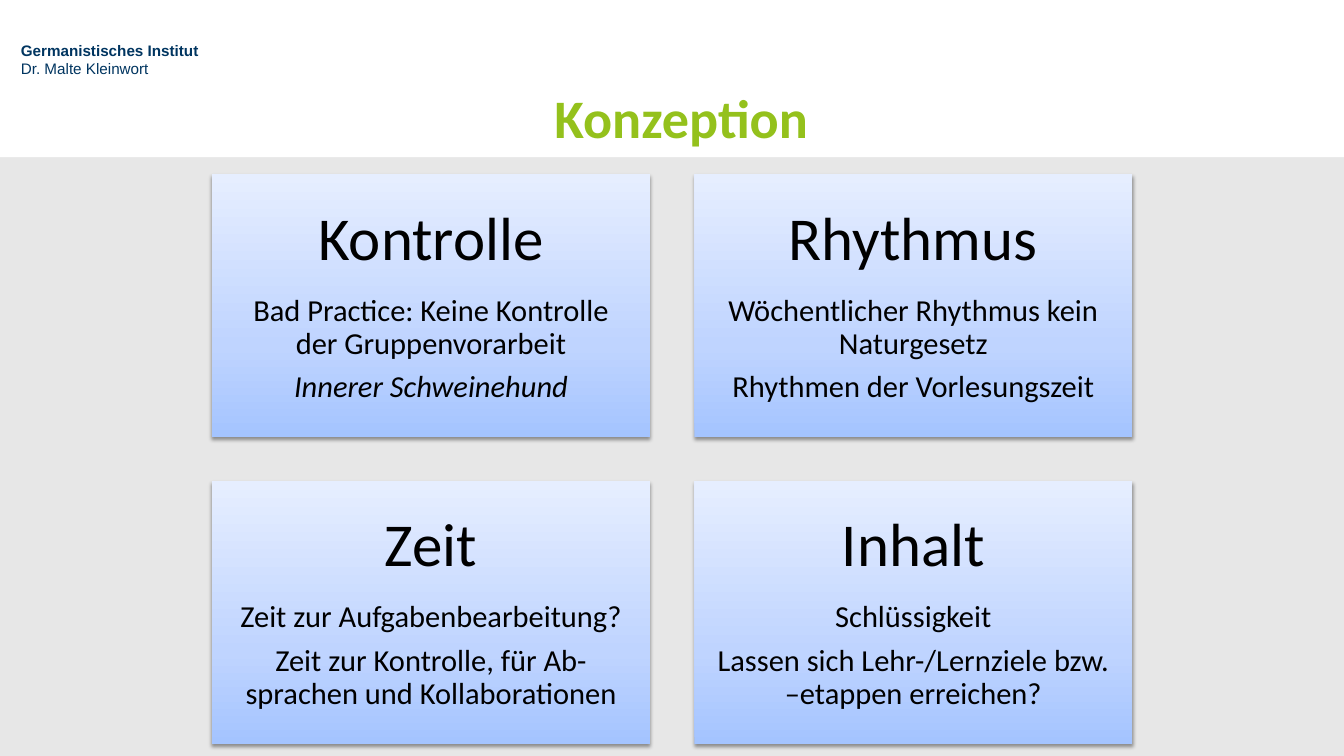
from lxml import etree
from pptx import Presentation
from pptx.dml.color import RGBColor
from pptx.enum.shapes import MSO_SHAPE
from pptx.enum.text import MSO_ANCHOR, MSO_AUTO_SIZE, PP_ALIGN
from pptx.oxml import parse_xml
from pptx.oxml.ns import nsdecls, qn
from pptx.util import Cm, Pt

RECTANGLE = MSO_SHAPE.RECTANGLE
MIDDLE = MSO_ANCHOR.MIDDLE
NO_AUTOFIT = MSO_AUTO_SIZE.NONE
LEFT, CENTER = PP_ALIGN.LEFT, PP_ALIGN.CENTER

WHITE = RGBColor(0xFF, 0xFF, 0xFF)
BLACK = RGBColor(0x00, 0x00, 0x00)
GREY = RGBColor(0xE7, 0xE7, 0xE7)
NAVY = RGBColor(0x00, 0x35, 0x60)
GREEN = RGBColor(0x94, 0xC1, 0x1C)
CARD_GRADIENT = [
    (0, RGBColor(0xA4, 0xC4, 0xFF)),
    (35, RGBColor(0xBF, 0xD4, 0xFF)),
    (100, RGBColor(0xE6, 0xEE, 0xFF)),
]

CARDS = [
    ("Kontrolle", "Bad Practice: Keine Kontrolle der Gruppenvorarbeit", "Innerer Schweinehund"),
    ("Rhythmus", "Wöchentlicher Rhythmus kein Naturgesetz", "Rhythmen der Vorlesungszeit"),
    ("Zeit", "Zeit zur Aufgabenbearbeitung?", "Zeit zur Kontrolle, für Ab-sprachen und Kollaborationen"),
    ("Inhalt", "Schlüssigkeit", "Lassen sich Lehr-/Lernziele bzw. –etappen erreichen?"),
]
CARD_LEFT, CARD_TOP = 5.89, 4.85
CARD_WIDTH, CARD_HEIGHT = 12.17, 7.31
COLUMN_STEP, ROW_STEP = 13.4, 8.52


def write_paragraph(frame, text, size, color, font="Calibri", bold=False, italic=False,
                    align=CENTER, line_spacing=1.0, space_after=0):
    """Fill the empty first paragraph of the frame, or append a new one."""
    paragraph = frame.paragraphs[0] if not frame.text else frame.add_paragraph()
    paragraph.alignment = align
    paragraph.line_spacing = line_spacing
    paragraph.space_before = Pt(0)
    paragraph.space_after = Pt(space_after)
    run = paragraph.add_run()
    run.text = text
    run.font.name = font
    run.font.size = Pt(size)
    run.font.bold = bold
    run.font.italic = italic
    run.font.color.rgb = color


def add_rectangle(left, top, width, height):
    rectangle = slide.shapes.add_shape(RECTANGLE, Cm(left), Cm(top), Cm(width), Cm(height))
    rectangle.shadow.inherit = False
    rectangle.line.fill.background()
    return rectangle


prs = Presentation()
prs.slide_width, prs.slide_height = Cm(37.34), Cm(21.01)
slide = prs.slides.add_slide(prs.slide_layouts[5])
slide.background.fill.solid()
slide.background.fill.fore_color.rgb = GREY

# Header band with institute and title
header = add_rectangle(0, 0, 37.34, 4.37)
header.fill.solid()
header.fill.fore_color.rgb = WHITE

institute = slide.shapes.add_textbox(Cm(0.58), Cm(1.14), Cm(7.24), Cm(1.6)).text_frame
institute.word_wrap = True
institute.margin_left = institute.margin_right = 0
institute.margin_top = institute.margin_bottom = 0
write_paragraph(institute, "Germanistisches Institut", 12, NAVY, font="Arial", bold=True, align=LEFT)
write_paragraph(institute, "Dr. Malte Kleinwort", 12, NAVY, font="Arial", align=LEFT)

title = slide.shapes.title
title.left, title.top, title.width, title.height = Cm(0.53), Cm(2.21), Cm(36.8), Cm(2.08)
title.text_frame.auto_size = NO_AUTOFIT
title.text_frame.vertical_anchor = MIDDLE
write_paragraph(title.text_frame, "Konzeption", 42.7, GREEN, bold=True)
title.element.getparent().append(title.element)  # in front of the header band

# Cards in a grid of two columns
for index, (heading, *points) in enumerate(CARDS):
    row, column = divmod(index, 2)
    card = add_rectangle(CARD_LEFT + column * COLUMN_STEP, CARD_TOP + row * ROW_STEP,
                         CARD_WIDTH, CARD_HEIGHT)

    card.fill.gradient()
    card.fill.gradient_angle = 90
    stops = card.element.spPr.find(".//" + qn("a:gsLst"))
    stops.clear()
    for position, color in CARD_GRADIENT:
        stop = etree.SubElement(stops, qn("a:gs"), pos=str(position * 1000))
        etree.SubElement(stop, qn("a:srgbClr"), val=str(color))

    card.element.spPr.find(qn("a:effectLst")).append(parse_xml(
        f'<a:outerShdw {nsdecls("a")} blurRad="40000" dist="20000" dir="5400000" rotWithShape="0">'
        '<a:srgbClr val="000000"><a:alpha val="38000"/></a:srgbClr></a:outerShdw>'))

    frame = card.text_frame
    frame.word_wrap = True
    frame.vertical_anchor = MIDDLE
    frame.margin_left = frame.margin_right = Cm(0.51)
    frame.margin_top = frame.margin_bottom = Cm(0.51)
    write_paragraph(frame, heading, 48, BLACK, line_spacing=0.9, space_after=16.8)
    for point in points:
        write_paragraph(frame, point, 24, BLACK, italic=point == "Innerer Schweinehund",
                        line_spacing=0.9, space_after=8.4)

prs.save("out.pptx")
